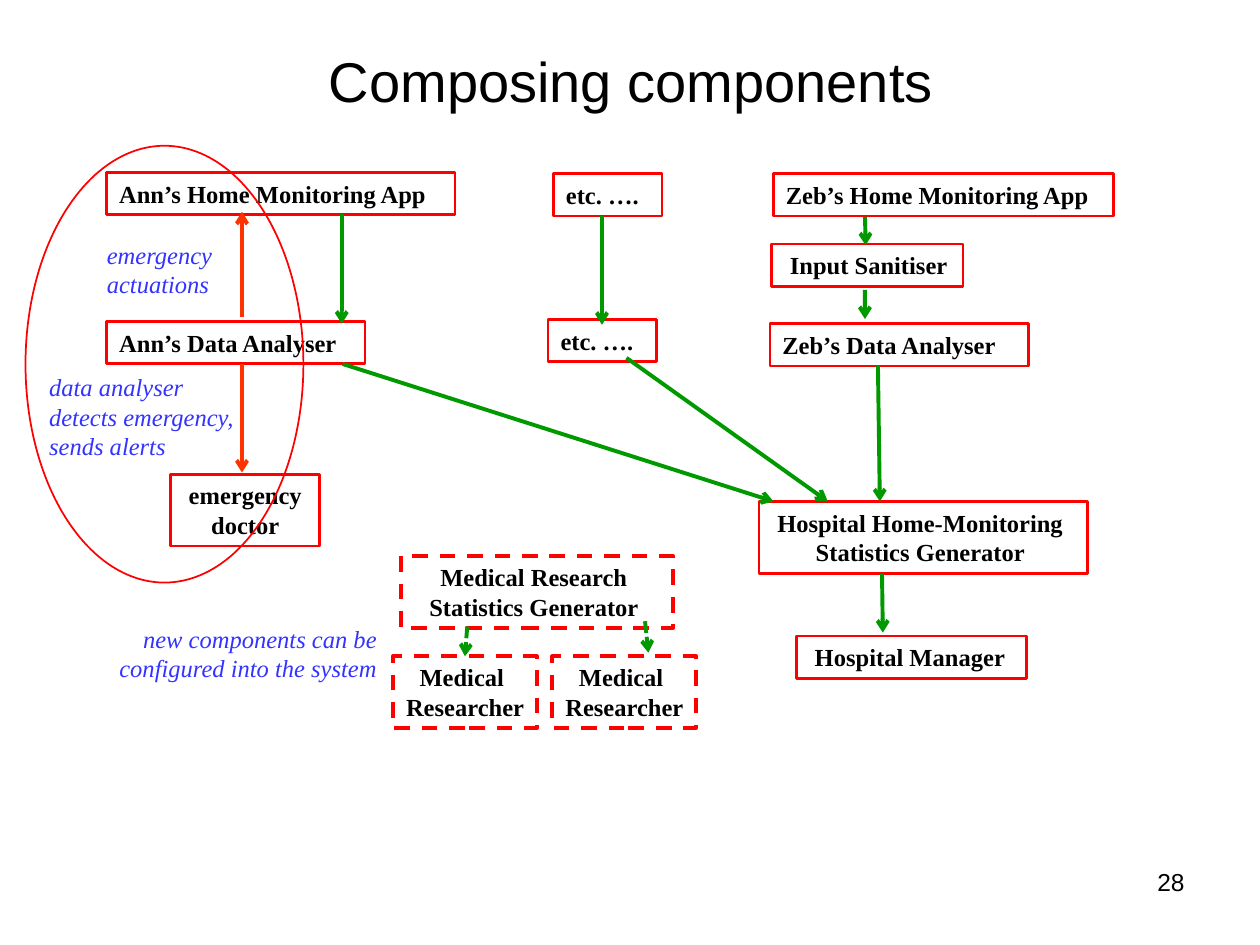
from lxml import etree
from pptx import Presentation
from pptx.dml.color import RGBColor
from pptx.enum.dml import MSO_LINE
from pptx.enum.shapes import MSO_CONNECTOR, MSO_SHAPE
from pptx.enum.text import MSO_ANCHOR, MSO_AUTO_SIZE, PP_ALIGN
from pptx.oxml.ns import qn
from pptx.util import Pt

LEFT, CENTER, RIGHT = PP_ALIGN.LEFT, PP_ALIGN.CENTER, PP_ALIGN.RIGHT
TOP, MIDDLE = MSO_ANCHOR.TOP, MSO_ANCHOR.MIDDLE
GROW = MSO_AUTO_SIZE.SHAPE_TO_FIT_TEXT
RECT, OVAL = MSO_SHAPE.RECTANGLE, MSO_SHAPE.OVAL
STRAIGHT = MSO_CONNECTOR.STRAIGHT
DASH, SHORT_DASH = MSO_LINE.DASH, MSO_LINE.SQUARE_DOT

COLORS = {"text": "000000", "note": "3333FF", "box": "FF0000",
          "data": "009900", "alert": "FF3300"}
SANS, SERIF = "Arial", "Times New Roman"
ONE_LINE, TWO_LINES = 24.2, 41.1  # box heights

# left, top, width, lines of text
COMPONENTS = [
    (61, 98.6, 199, ["Ann’s Home Monitoring App"]),
    (316.3, 99.3, 62, ["etc. …."]),
    (442, 99.3, 194.4, ["Zeb’s Home Monitoring App"]),
    (440.8, 139.5, 109.6, [" Input Sanitiser"]),
    (61, 183.7, 147.6, ["Ann’s Data Analyser"]),
    (313.2, 182.5, 62, ["etc. …."]),
    (440, 185, 147.6, ["Zeb’s Data Analyser"]),
    (97.6, 271, 85.2, ["emergency", "doctor"]),
    (433.7, 286.5, 187.8, ["Hospital Home-Monitoring ", "Statistics Generator "]),
    (455, 363.4, 131.6, [" Hospital Manager"]),
]
NEW_COMPONENTS = [
    (229, 317.7, 155.6, ["Medical Research ", "Statistics Generator "]),
    (224.6, 375, 82.2, ["Medical ", "Researcher  "]),
    (315.6, 375, 82.2, ["Medical ", "Researcher  "]),
]
# left, top, width, height, lines, alignment
NOTES = [
    (54, 133.4, 79.2, 41, ["emergency actuations"], LEFT),
    (21, 209.3, 121.6, 58, ["data analyser", "detects emergency,", "sends alerts"], LEFT),
    (36.7, 352.8, 185.8, 41, ["new components can be configured into the system"], RIGHT),
]
# x and y of the start, x and y of the arrowhead
DATA_FLOWS = [
    (195.3, 122.5, 195.3, 185),
    (344, 123.2, 344, 185.6),
    (494.3, 124, 494.7, 140.2),
    (494.2, 165.6, 494.3, 182.3),
    (195.8, 208, 442, 286.5),
    (358, 204.5, 473, 286.5),
    (501.7, 208.8, 502.8, 286.5),
    (504, 327.6, 504.5, 361.5),
]
NEW_FLOWS = [(267, 358, 265.7, 375), (368.6, 355, 370.5, 373)]
ALERTS = [(138.3, 181.4, 138.3, 121), (138.3, 208, 138.3, 270)]


def rgb(name):
    return RGBColor.from_string(COLORS[name])


def write(sp, lines, size=14, font=SERIF, color="text", align=LEFT,
          anchor=TOP, bold=False, italic=False, grow=True):
    tf = sp.text_frame
    tf.word_wrap = True
    tf.vertical_anchor = anchor
    if grow:
        tf.auto_size = GROW
    for i, line in enumerate(lines):
        p = tf.paragraphs[0] if i == 0 else tf.add_paragraph()
        p.alignment = align
        r = p.add_run()
        r.text = line
        r.font.size, r.font.name = Pt(size), font
        r.font.bold, r.font.italic = bold, italic
        r.font.color.rgb = rgb(color)


def add_text(s, x, y, w, h, lines, **style):
    write(s.shapes.add_textbox(Pt(x), Pt(y), Pt(w), Pt(h)), lines, **style)


def add_outline(s, kind, x, y, w, h, weight, dash=None):
    sp = s.shapes.add_shape(kind, Pt(x), Pt(y), Pt(w), Pt(h))
    sp.shadow.inherit = False
    sp.fill.background()
    sp.line.color.rgb = rgb("box")
    sp.line.width = Pt(weight)
    if dash:
        sp.line.dash_style = dash
    return sp


def add_component(s, x, y, w, lines, weight=1.5, dash=None):
    """Single-line labels are left-aligned, longer ones centred."""
    single = len(lines) == 1
    sp = add_outline(s, RECT, x, y, w, ONE_LINE if single else TWO_LINES, weight, dash)
    write(sp, lines, bold=True, align=LEFT if single else CENTER)


def add_arrow(s, x1, y1, x2, y2, color, dash=None):
    line = s.shapes.add_connector(STRAIGHT, Pt(x1), Pt(y1), Pt(x2), Pt(y2))
    line.line.color.rgb = rgb(color)
    line.line.width = Pt(2.25)
    if dash:
        line.line.dash_style = dash
    ln = line.line._get_or_add_ln()
    etree.SubElement(ln, qn("a:tailEnd"), type="arrow")
    etree.SubElement(line._element.spPr, qn("a:effectLst"))


def main():
    prs = Presentation()
    prs.slide_width, prs.slide_height = Pt(720), Pt(540)
    s = prs.slides.add_slide(prs.slide_layouts[6])

    add_text(s, 36.7, 9.4, 648, 72.7, ["Composing components"], size=32,
             font=SANS, align=CENTER, anchor=MIDDLE, grow=False)
    add_text(s, 516.2, 491.8, 167.8, 37.4, ["28"], font=SANS, align=RIGHT, grow=False)

    for component in COMPONENTS:
        add_component(s, *component)
    for component in NEW_COMPONENTS:
        add_component(s, *component, weight=2.25, dash=DASH)
    for flow in DATA_FLOWS:
        add_arrow(s, *flow, "data")
    for flow in NEW_FLOWS:
        add_arrow(s, *flow, "data", SHORT_DASH)
    for alert in ALERTS:
        add_arrow(s, *alert, "alert")
    for *place, lines, align in NOTES:
        add_text(s, *place, lines, color="note", align=align, italic=True)
    add_outline(s, OVAL, 14.6, 83.3, 158.8, 249.6, 1)

    prs.save("out.pptx")


if __name__ == "__main__":
    main()
